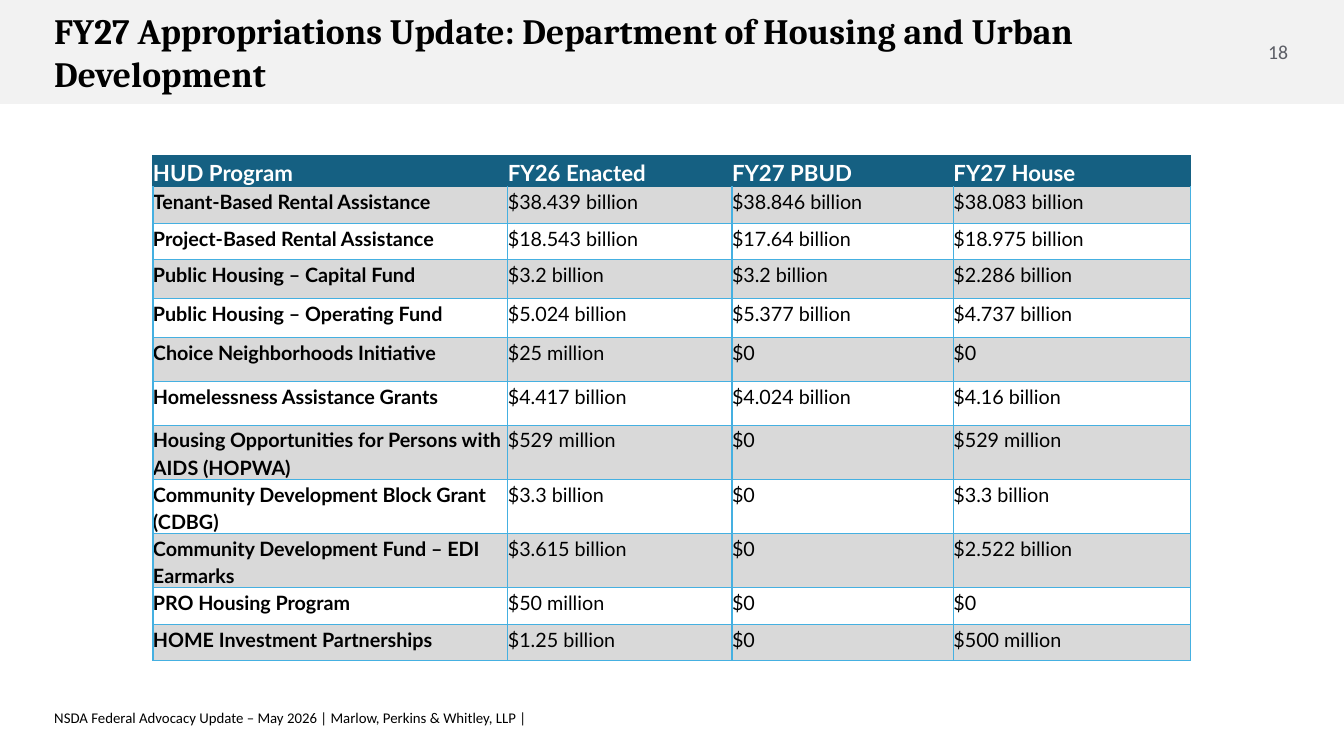
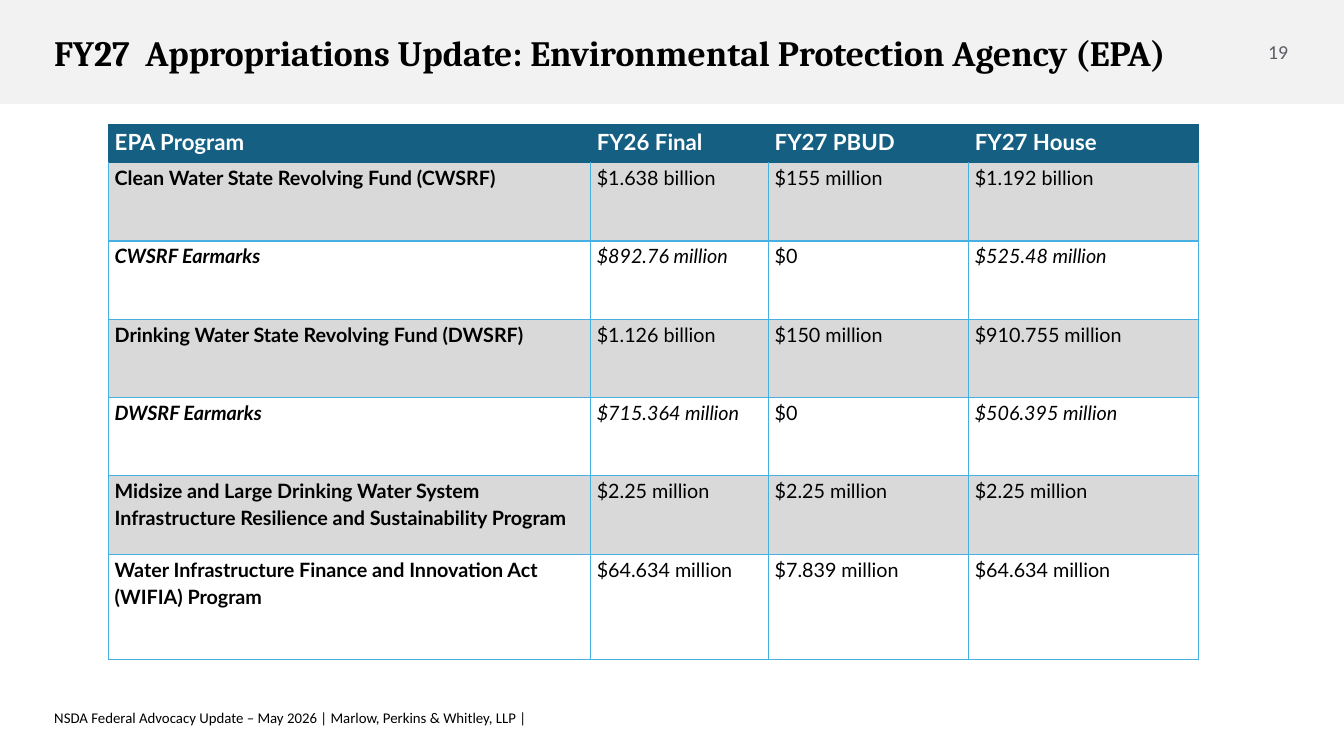
from lxml import etree
from pptx import Presentation
from pptx.dml.color import RGBColor
from pptx.enum.shapes import MSO_SHAPE
from pptx.enum.text import MSO_ANCHOR, MSO_AUTO_SIZE, PP_ALIGN
from pptx.oxml.ns import qn
from pptx.util import Inches, Pt

RECTANGLE = MSO_SHAPE.RECTANGLE
MIDDLE = MSO_ANCHOR.MIDDLE
NO_AUTOFIT = MSO_AUTO_SIZE.NONE
LEFT, CENTER = PP_ALIGN.LEFT, PP_ALIGN.CENTER

# Shared look
BAND, WHITE, BLACK = "F2F2F2", "FFFFFF", "000000"
HEADER, STRIPE, GRID = "156082", "D9D9D9", "45B0E1"
TITLE_FONT = {"name": "Cambria", "size": Pt(28.8), "bold": True, "color": BLACK}
NUMBER_FONT = {"name": "Calibri", "size": Pt(16), "color": "5C5E66"}
FOOTER_FONT = {"name": "Calibri", "size": Pt(12), "color": BLACK}
HEADER_FONT = {"name": "Lato", "size": Pt(18), "bold": True, "color": WHITE}
BODY_FONT = {"name": "Lato", "size": Pt(16), "color": BLACK}
FOOTER = "NSDA Federal Advocacy Update – May 2026 | Marlow, Perkins & Whitley, LLP |"
FIRST_NUMBER = 18

# Content of each slide
updates = [
    {
        "title": "FY27 Appropriations Update: Department of Housing and Urban Development",
        "left": 1.72, "top": 1.75, "inset": 0,
        "widths": [3.99, 2.52, 2.49, 2.67],
        "heights": [0.35, 0.41, 0.41, 0.44, 0.44, 0.49, 0.49, 0.61, 0.61, 0.61, 0.41, 0.41],
        "rows": [
            ("HUD Program", "FY26 Enacted", "FY27 PBUD", "FY27 House"),
            ("Tenant-Based Rental Assistance", "$38.439 billion", "$38.846 billion", "$38.083 billion"),
            ("Project-Based Rental Assistance", "$18.543 billion", "$17.64 billion", "$18.975 billion"),
            ("Public Housing – Capital Fund", "$3.2 billion", "$3.2 billion", "$2.286 billion"),
            ("Public Housing – Operating Fund", "$5.024 billion", "$5.377 billion", "$4.737 billion"),
            ("Choice Neighborhoods Initiative", "$25 million", "$0", "$0"),
            ("Homelessness Assistance Grants", "$4.417 billion", "$4.024 billion", "$4.16 billion"),
            ("Housing Opportunities for Persons with AIDS (HOPWA)", "$529 million", "$0", "$529 million"),
            ("Community Development Block Grant (CDBG)", "$3.3 billion", "$0", "$3.3 billion"),
            ("Community Development Fund – EDI Earmarks", "$3.615 billion", "$0", "$2.522 billion"),
            ("PRO Housing Program", "$50 million", "$0", "$0"),
            ("HOME Investment Partnerships", "$1.25 billion", "$0", "$500 million"),
        ],
    },
    {
        "title": "FY27  Appropriations Update: Environmental Protection Agency (EPA)",
        "left": 1.22, "top": 1.4, "inset": 0.07,
        "widths": [5.42, 2, 2.25, 2.58],
        "heights": [0.43] + [0.88] * 5 + [1.19],
        "rows": [
            ("EPA Program", "FY26 Final", "FY27 PBUD", "FY27 House"),
            ("Clean Water State Revolving Fund (CWSRF)", "$1.638 billion", "$155 million", "$1.192 billion"),
            ("CWSRF Earmarks", "$892.76 million", "$0", "$525.48 million"),
            ("Drinking Water State Revolving Fund (DWSRF)", "$1.126 billion", "$150 million", "$910.755 million"),
            ("DWSRF Earmarks", "$715.364 million", "$0", "$506.395 million"),
            ("Midsize and Large Drinking Water System Infrastructure Resilience and Sustainability Program",
             "$2.25 million", "$2.25 million", "$2.25 million"),
            ("Water Infrastructure Finance and Innovation Act (WIFIA) Program",
             "$64.634 million", "$7.839 million", "$64.634 million"),
        ],
    },
]


def rgb(color):
    return RGBColor.from_string(color)


def write(frame, text, font, insets, align=LEFT, spacing=1.0):
    """Fill a shape's text frame or a table cell with one formatted paragraph."""
    for side, inset in zip(("left", "top", "right", "bottom"), insets):
        setattr(frame, f"margin_{side}", Inches(inset))
    frame.text = text
    paragraph = getattr(frame, "text_frame", frame).paragraphs[0]
    paragraph.alignment = align
    paragraph.line_spacing = spacing
    run_font = paragraph.runs[0].font
    for key, value in font.items():
        if key == "color":
            run_font.color.rgb = rgb(value)
        else:
            setattr(run_font, key, value)


prs = Presentation()
prs.slide_width, prs.slide_height = Inches(15.11), Inches(8.5)
title_only = prs.slide_layouts[5]

for number, update in enumerate(updates, FIRST_NUMBER):
    slide = prs.slides.add_slide(title_only)
    shapes = slide.shapes

    # Title band, behind the title
    band = shapes.add_shape(RECTANGLE, 0, 0, prs.slide_width, Inches(1.17))
    band.shadow.inherit = False
    band.fill.solid()
    band.fill.fore_color.rgb = rgb(BAND)
    band.line.fill.background()
    shapes.title.element.addprevious(band.element)

    # Title
    title = shapes.title
    title.left, title.top = Inches(0.5), Inches(0.26)
    title.width, title.height = Inches(13.52), Inches(0.65)
    write(title.text_frame, update["title"], TITLE_FONT, (0.11, 0.06, 0.11, 0.06))

    # Slide number and footer
    page = shapes.add_textbox(Inches(14.12), Inches(0.26), Inches(0.5), Inches(0.65))
    write(page.text_frame, str(number), NUMBER_FONT, (0, 0, 0, 0), CENTER)
    footer = shapes.add_textbox(Inches(0.5), Inches(7.96), Inches(12.64), Inches(0.25))
    write(footer.text_frame, FOOTER, FOOTER_FONT, (0.11, 0, 0, 0), spacing=0.8)
    for part in (title, page, footer):
        part.text_frame.word_wrap = part is not page
        part.text_frame.auto_size = NO_AUTOFIT
        part.text_frame.vertical_anchor = MIDDLE

    # Program table
    rows, widths, heights = update["rows"], update["widths"], update["heights"]
    programs = shapes.add_table(
        len(rows), len(widths), Inches(update["left"]), Inches(update["top"]),
        Inches(sum(widths)), Inches(sum(heights))).table
    programs.horz_banding = False
    for column, width in zip(programs.columns, widths):
        column.width = Inches(width)

    for r, (row, height) in enumerate(zip(rows, heights)):
        programs.rows[r].height = Inches(height)
        earmarks = row[0].endswith("SRF Earmarks")
        for c, text in enumerate(row):
            cell = programs.cell(r, c)
            if r == 0:
                font, fill = HEADER_FONT, HEADER
            else:
                font = {**BODY_FONT, "bold": c == 0, "italic": earmarks and text != "$0"}
                fill = STRIPE if r % 2 else WHITE
            write(cell, text, font, (update["inset"], 0, update["inset"], 0), spacing=1.15)

            # Cell borders come before the fill in the cell properties
            properties = cell._tc.get_or_add_tcPr()
            for edge in ("lnL", "lnR", "lnT", "lnB"):
                dark = r == 0 or (r == 1 and edge == "lnT")
                border = etree.SubElement(properties, qn(f"a:{edge}"), w=str(Pt(1)))
                paint = etree.SubElement(border, qn("a:solidFill"))
                etree.SubElement(paint, qn("a:srgbClr"), val=HEADER if dark else GRID)
            cell.fill.solid()
            cell.fill.fore_color.rgb = rgb(fill)

prs.save("out.pptx")
